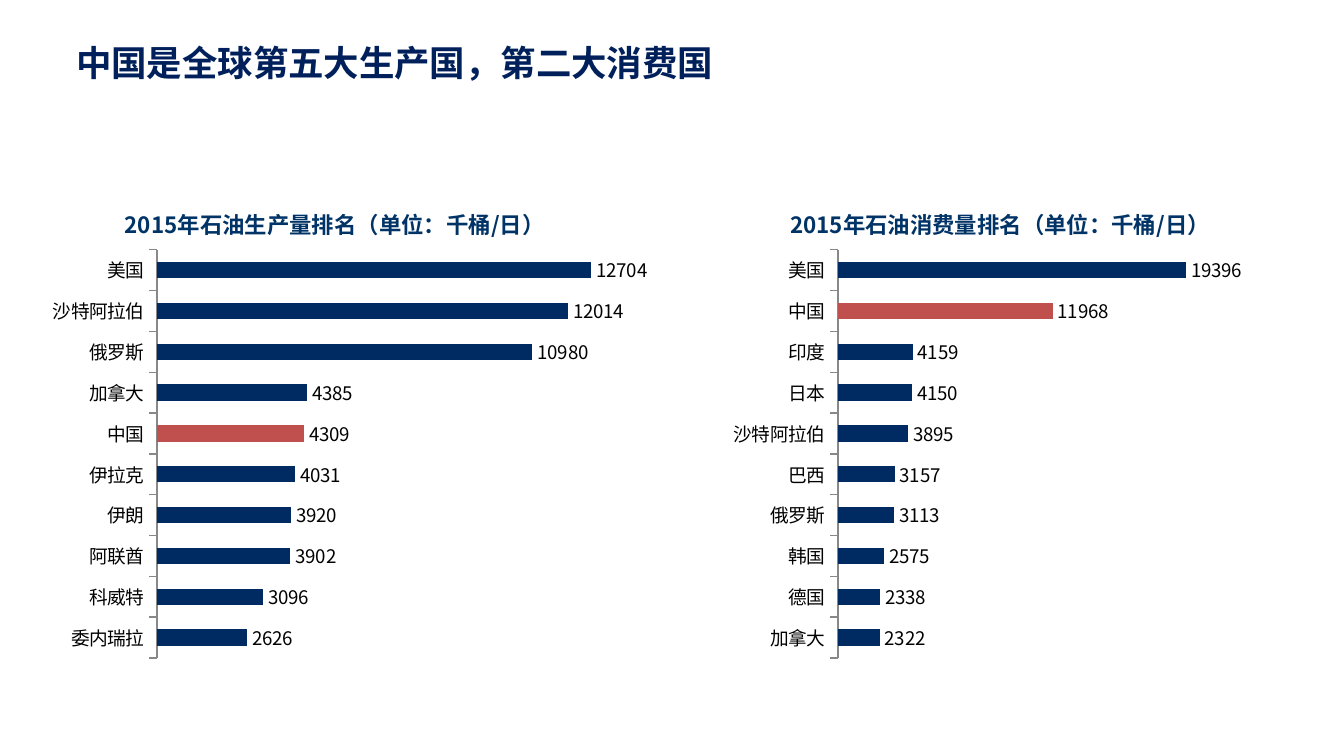
from lxml import etree
from pptx import Presentation
from pptx.chart.data import CategoryChartData
from pptx.dml.color import RGBColor
from pptx.enum.chart import XL_CHART_TYPE, XL_LABEL_POSITION, XL_TICK_MARK
from pptx.enum.text import MSO_ANCHOR
from pptx.oxml.ns import qn
from pptx.util import Emu, Pt

EMU_PER_PX = 914400 / 134.4
BAR = XL_CHART_TYPE.BAR_CLUSTERED
LABEL_OUTSIDE = XL_LABEL_POSITION.OUTSIDE_END
TICK_OUTSIDE = XL_TICK_MARK.OUTSIDE
TICK_NONE = XL_TICK_MARK.NONE
MIDDLE = MSO_ANCHOR.MIDDLE

PRODUCTION = {
    "委内瑞拉": 2626, "科威特": 3096, "阿联酋": 3902, "伊朗": 3920, "伊拉克": 4031,
    "中国": 4309, "加拿大": 4385, "俄罗斯": 10980, "沙特阿拉伯": 12014, "美国": 12704,
}
CONSUMPTION = {
    "加拿大": 2322, "德国": 2338, "韩国": 2575, "俄罗斯": 3113, "巴西": 3157,
    "沙特阿拉伯": 3895, "日本": 4150, "印度": 4159, "中国": 11968, "美国": 19396,
}


def px(length):
    return Emu(round(length * EMU_PER_PX))


def color(hex_code):
    return RGBColor.from_string(hex_code)


def format_font(font, size, hex_code, name, bold=False):
    font.size = Pt(size)
    font.color.rgb = color(hex_code)
    font.name = name
    font.bold = bold


def write(frame, text, **style):
    paragraph = frame.paragraphs[0]
    run = paragraph.add_run()
    run.text = text
    format_font(run.font, **style)


def place(parent, index, **fractions):
    for old in parent.findall(qn("c:layout")):
        parent.remove(old)
    layout = etree.Element(qn("c:layout"))
    manual = etree.SubElement(layout, qn("c:manualLayout"))
    settings = {"xMode": "edge", "yMode": "edge", **fractions}
    if "w" in fractions:
        settings = {"layoutTarget": "inner", **settings}
    for tag, value in settings.items():
        etree.SubElement(manual, qn(f"c:{tag}")).set("val", str(value))
    parent.insert(index, layout)


class RankingSlide:
    """Holds the slide and the style of its heading and ranking charts."""

    heading_style = dict(size=19, hex_code="00205B", name="Cabin", bold=True)
    title_style = dict(size=12, hex_code="003366", name="Noto Sans CJK SC", bold=True)
    label_style = dict(size=10, hex_code="000000", name="Noto Sans CJK SC")
    bar_color = "002B62"
    highlight_color = "C0504D"
    axis_color = "888888"

    def __init__(self, presentation):
        self.slide = presentation.slides.add_slide(presentation.slide_layouts[6])

    def heading(self, text, left, top, width, height):
        box = self.slide.shapes.add_textbox(px(left), px(top), px(width), px(height))
        frame = box.text_frame
        frame.word_wrap = True
        frame.vertical_anchor = MIDDLE
        write(frame, text, **self.heading_style)

    def ranking(self, title, values, left, width, maximum, title_x, plot_x, plot_width):
        ranking_data = CategoryChartData()
        ranking_data.categories = list(values)
        ranking_data.add_series("Series 1", list(values.values()))
        chart = self.slide.shapes.add_chart(
            BAR, px(left), px(176), px(width), px(492), ranking_data).chart
        chart.has_legend = False
        format_font(chart.font, **self.label_style)

        chart.has_title = True
        write(chart.chart_title.text_frame, title, **self.title_style)
        chart.chart_title.include_in_layout = False
        place(chart.element.find(".//" + qn("c:title")), 1, x=title_x, y=0.05)
        place(chart.element.find(".//" + qn("c:plotArea")), 0,
              x=plot_x, y=0.15, w=plot_width, h=0.83)

        countries = chart.category_axis
        countries.major_tick_mark = TICK_OUTSIDE
        countries.minor_tick_mark = TICK_NONE
        countries.format.line.color.rgb = color(self.axis_color)
        countries.format.line.width = Pt(0.75)
        format_font(countries.tick_labels.font, **self.label_style)
        volumes = chart.value_axis
        volumes.has_major_gridlines = False
        volumes.minimum_scale = 0
        volumes.maximum_scale = maximum
        volumes.visible = False

        plot = chart.plots[0]
        plot.gap_width = 150
        plot.vary_by_categories = False
        bars = plot.series[0]
        self.paint(bars, self.bar_color)
        self.paint(bars.points[list(values).index("中国")], self.highlight_color)
        labels = bars.data_labels
        labels.show_value = True
        labels.position = LABEL_OUTSIDE
        format_font(labels.font, **self.label_style)

    def paint(self, bar, hex_code):
        bar.format.fill.solid()
        bar.format.fill.fore_color.rgb = color(hex_code)


def main():
    presentation = Presentation()
    presentation.slide_width = px(1344)
    presentation.slide_height = px(756)
    page = RankingSlide(presentation)
    page.heading("中国是全球第五大生产国，第二大消费国", 63, 31, 1085, 63)
    page.ranking("2015年石油生产量排名（单位：千桶/日）", PRODUCTION, left=42, width=606,
                 maximum=14000, title_x=0.13, plot_x=0.19, plot_width=0.79)
    page.ranking("2015年石油消费量排名（单位：千桶/日）", CONSUMPTION, left=723, width=575,
                 maximum=25000, title_x=0.11, plot_x=0.2, plot_width=0.78)
    presentation.save("out.pptx")


if __name__ == "__main__":
    main()
